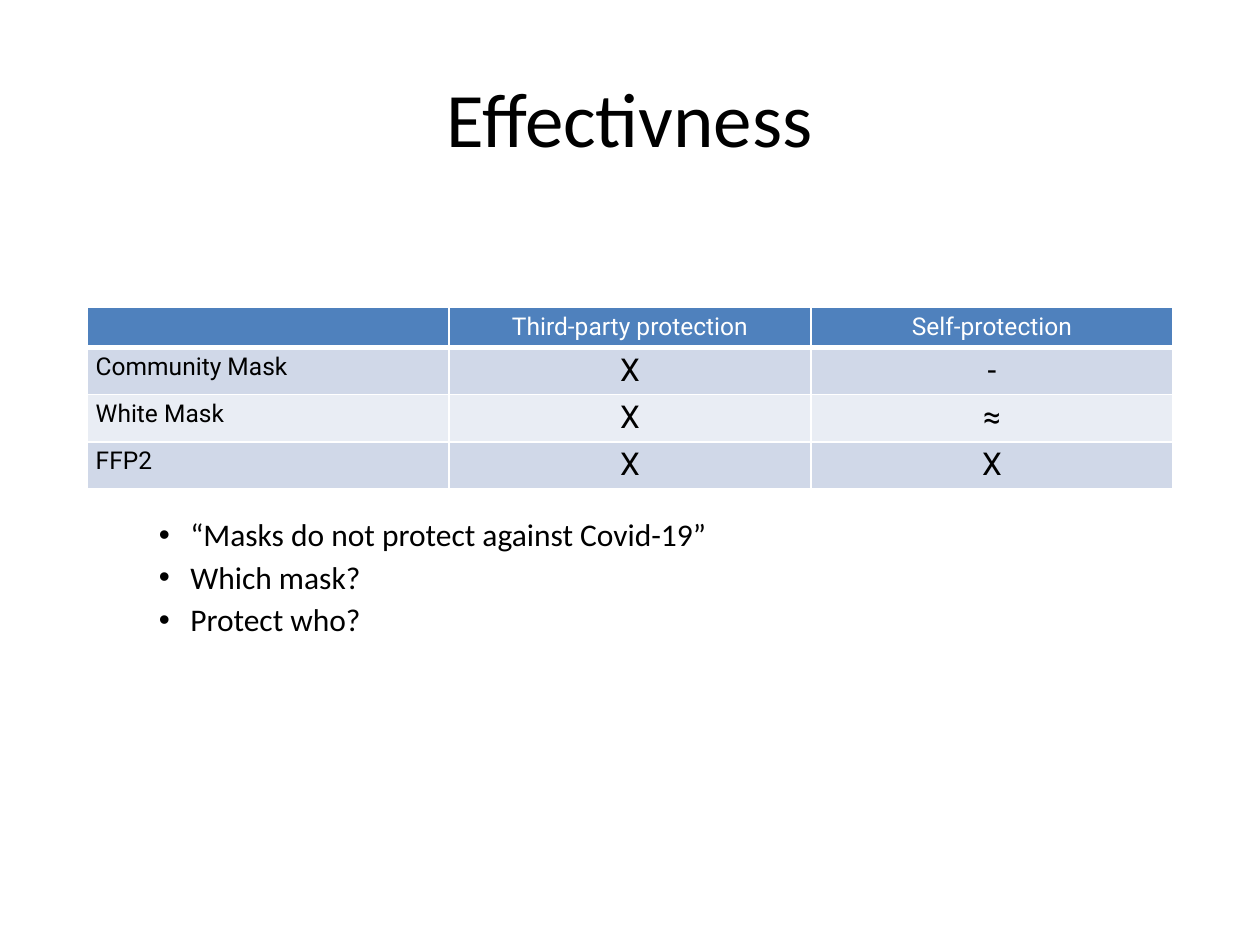
import pptx
import pptx.util
import pptx.dml.color
import pptx.enum.text
import pptx.oxml.ns
import lxml.etree

COLORS = {
    "text": "000000",
    "white": "FFFFFF",
    "header": "4F81BD",
    "odd_row": "D0D8E8",
    "even_row": "E9EDF4",
}
Inches, Pt = pptx.util.Inches, pptx.util.Pt
qn = pptx.oxml.ns.qn
ALIGN = pptx.enum.text.PP_ALIGN


def add_run(paragraph, text, size, font, color):
    run = paragraph.add_run()
    run.text = text
    run.font.size = Pt(size)
    run.font.name = font
    run.font.bold = False
    run.font.color.rgb = pptx.dml.color.RGBColor.from_string(COLORS[color])


def add_border(cell, side, width):
    line = lxml.etree.SubElement(
        cell._tc.get_or_add_tcPr(), qn("a:ln" + side), w=str(Pt(width)))
    fill = lxml.etree.SubElement(line, qn("a:solidFill"))
    lxml.etree.SubElement(fill, qn("a:srgbClr"), val=COLORS["white"])


deck = pptx.Presentation()
deck.slide_width, deck.slide_height = Inches(10), Inches(7.5)
slide = deck.slides.add_slide(deck.slide_layouts[1])

# Shared column for table and list
left, width = Inches(0.69), Inches(8.62)
pad_x, pad_y = Inches(0.07), Inches(0.04)

# Title
title = slide.shapes.title
title.left, title.top = Inches(0.5), Inches(0.3)
title.width, title.height = Inches(9), Inches(1.25)
heading = title.text_frame.paragraphs[0]
heading.alignment = ALIGN.CENTER
add_run(heading, "Effectivness", 44, "Calibri", "text")

# Mask comparison table
ratings = [
    ["", "Third-party protection", "Self-protection"],
    ["Community Mask", "X", "-"],
    ["White Mask", "X", "≈"],
    ["FFP2", "X", "X"],
]
row_heights = [0.3] + [0.375] * 3
masks = slide.shapes.add_table(
    len(ratings), len(ratings[0]), left, Inches(2.44), width,
    Inches(sum(row_heights))).table
for column in masks.columns:
    column.width = width // len(ratings[0])

for r, row in enumerate(ratings):
    masks.rows[r].height = Inches(row_heights[r])
    is_header = r == 0
    fill = "header" if is_header else "odd_row" if r % 2 else "even_row"
    for c, text in enumerate(row):
        cell = masks.cell(r, c)
        cell.margin_left = cell.margin_right = pad_x
        cell.margin_top = cell.margin_bottom = pad_y
        for side in "LRTB":
            add_border(cell, side, 3 if is_header and side == "B" else 1)
        cell.fill.solid()
        cell.fill.fore_color.rgb = pptx.dml.color.RGBColor.from_string(COLORS[fill])
        entry = cell.text_frame.paragraphs[0]
        entry.alignment = ALIGN.CENTER if c else ALIGN.LEFT
        if text:
            add_run(entry, text, 14 if is_header or c == 0 else 18, "Roboto",
                    "white" if is_header else "text")
        else:
            # Keeps the empty corner from stretching the header row
            lxml.etree.SubElement(entry._p, qn("a:endParaRPr"), sz="1400")

# Questions
questions = slide.placeholders[1]
questions.left, questions.top = left, Inches(4.08)
questions.width, questions.height = width, Inches(1.93)
frame = questions.text_frame
frame.auto_size = pptx.enum.text.MSO_AUTO_SIZE.NONE
frame.margin_left = frame.margin_right = pad_x
frame.margin_top = frame.margin_bottom = pad_y
for i, text in enumerate(
        ["“Masks do not protect against Covid-19”", "Which mask?", "Protect who?"]):
    question = frame.add_paragraph() if i else frame.paragraphs[0]
    question.level = 1
    question.line_spacing = 0.9
    question.space_before = Pt(5 if i else 0)
    properties = question._p.get_or_add_pPr()
    properties.set("marL", str(Inches(0.75)))
    properties.set("indent", str(Inches(-0.25)))
    lxml.etree.SubElement(properties, qn("a:buFont"), typeface="Arial")
    lxml.etree.SubElement(properties, qn("a:buChar"), char="•")
    add_run(question, text, 18, "Calibri", "text")

deck.save("out.pptx")
